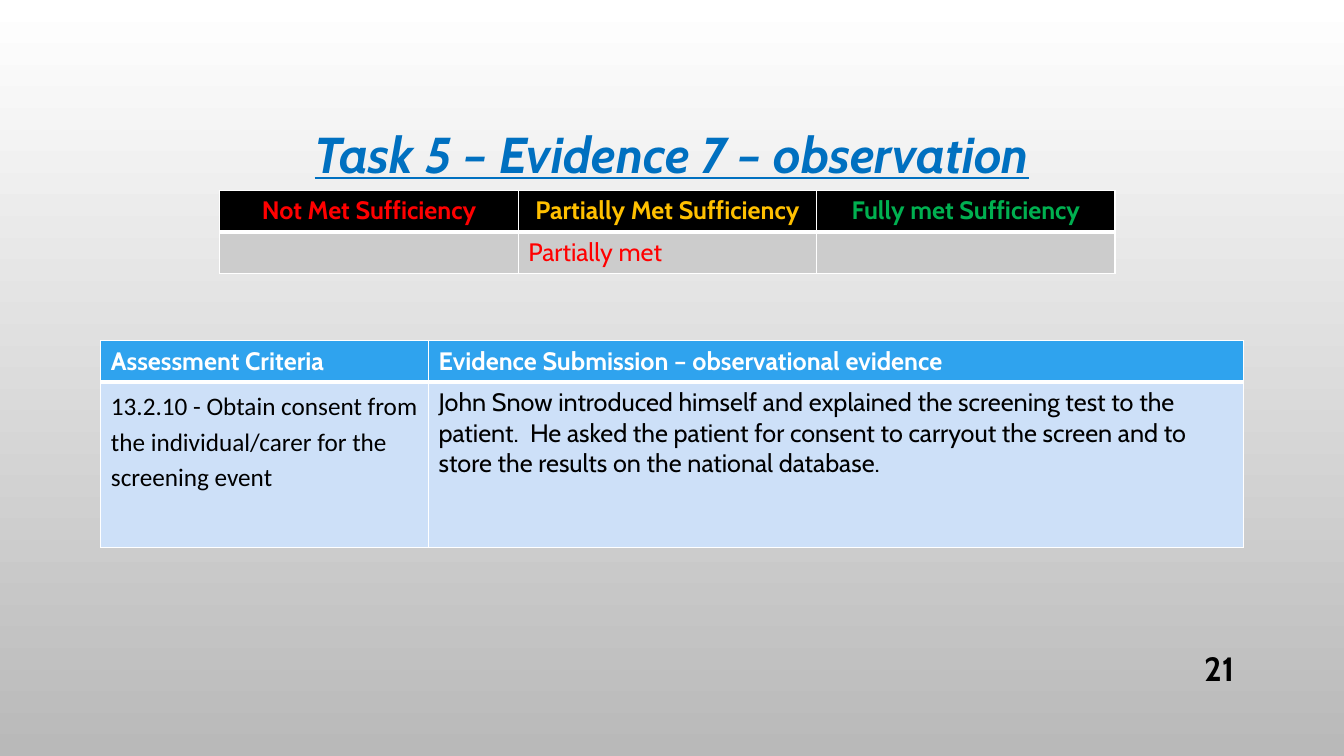
"""Build the Task 5 observation evidence slide with its two assessment tables."""
import pptx
import pptx.dml.color
import pptx.enum.text
import pptx.oxml
import pptx.oxml.ns
import pptx.util

Inches = pptx.util.Inches
Pt = pptx.util.Pt
ALIGN = pptx.enum.text.PP_ALIGN
MIDDLE = pptx.enum.text.MSO_ANCHOR.MIDDLE


def color(hex_string):
    return pptx.dml.color.RGBColor.from_string(hex_string)


def write(text_frame, text, size, hex_string, bold, align, font_name="Cabin"):
    paragraph = text_frame.paragraphs[0]
    paragraph.alignment = align
    run = paragraph.add_run()
    run.text = text
    run.font.name = font_name
    run.font.size = Pt(size)
    run.font.bold = bold
    run.font.color.rgb = color(hex_string)
    return paragraph


presentation = pptx.Presentation()
presentation.slide_width = Inches(13.33)
presentation.slide_height = Inches(7.5)
slide = presentation.slides.add_slide(presentation.slide_layouts[6])

background = slide.background.fill
background.gradient()
background.gradient_angle = 270
for stop, position, hex_string in zip(background.gradient_stops, (0, 1), ("FFFFFF", "B9B9B9")):
    stop.position = position
    stop.color.rgb = color(hex_string)

title = slide.shapes.add_textbox(Inches(1), Inches(0.68), Inches(11.33), Inches(1.75))
title.text_frame.word_wrap = True
title.text_frame.vertical_anchor = MIDDLE
heading = write(title.text_frame, "Task 5 – Evidence 7 – observation", 36, "0070C0", True, ALIGN.CENTER)
heading.line_spacing = 0.9
heading.runs[0].font.italic = True
heading.runs[0].font.underline = True

page_number = slide.shapes.add_textbox(Inches(11.5), Inches(6.43), Inches(0.84), Inches(0.4))
page_number.text_frame.word_wrap = True
page_number.text_frame.vertical_anchor = MIDDLE
write(page_number.text_frame, "21", 24, "000000", True, ALIGN.RIGHT)

sufficiency = {
    "left": 2.18, "top": 1.89, "columns": (2.96, 2.96, 2.96), "rows": (0.41, 0.41),
    "fills": ("000000", "CCCCCC"), "header_align": ALIGN.CENTER,
    "cells": (
        (("Not Met Sufficiency", "FF0000"), ("Partially Met Sufficiency", "FFC000"),
         ("Fully met Sufficiency", "00B050")),
        (("", "FF0000"), ("Partially met", "FF0000"), ("", "FF0000")),
    ),
}
criteria = {
    "left": 1, "top": 3.38, "columns": (3.25, 8.08), "rows": (0.41, 1.64),
    "fills": ("2FA3EE", "CDE0F8"), "header_align": ALIGN.LEFT,
    "cells": (
        (("Assessment Criteria", "FFFFFF"),
         ("Evidence Submission – observational evidence", "FFFFFF")),
        (("13.2.10 - Obtain consent from the individual/carer for the screening event", "000000"),
         ("John Snow introduced himself and explained the screening test to the patient.  "
          "He asked the patient for consent to carryout the screen and to store the results "
          "on the national database.", "000000")),
    ),
}

tables = []
for content in (sufficiency, criteria):
    columns, rows = content["columns"], content["rows"]
    table = slide.shapes.add_table(
        len(rows), len(columns), Inches(content["left"]), Inches(content["top"]),
        Inches(sum(columns)), Inches(sum(rows))).table
    tables.append(table)
    for column, width in zip(table.columns, columns):
        column.width = Inches(width)
    for row_index, height in enumerate(rows):
        table.rows[row_index].height = Inches(height)
        is_header = row_index == 0
        for column_index, (text, hex_string) in enumerate(content["cells"][row_index]):
            cell = table.cell(row_index, column_index)
            cell.fill.solid()
            cell.fill.fore_color.rgb = color(content["fills"][row_index])
            if text:
                align = content["header_align"] if is_header else ALIGN.LEFT
                write(cell.text_frame, text, 18, hex_string, is_header, align)
            thick_side = "lnB" if is_header else "lnT"
            for order, side in enumerate(("lnL", "lnR", "lnT", "lnB")):
                width = Pt(3 if side == thick_side else 1)
                border = pptx.oxml.parse_xml(
                    f'<a:{side} {pptx.oxml.ns.nsdecls("a")} w="{width}"><a:solidFill>'
                    f'<a:srgbClr val="FFFFFF"/></a:solidFill></a:{side}>')
                cell._tc.get_or_add_tcPr().insert(order, border)

criterion = tables[1].cell(1, 0).text_frame.paragraphs[0]
criterion.line_spacing = 1.15
criterion.space_after = Pt(10)
criterion.runs[0].font.name = "Calibri"

presentation.save("out.pptx")
